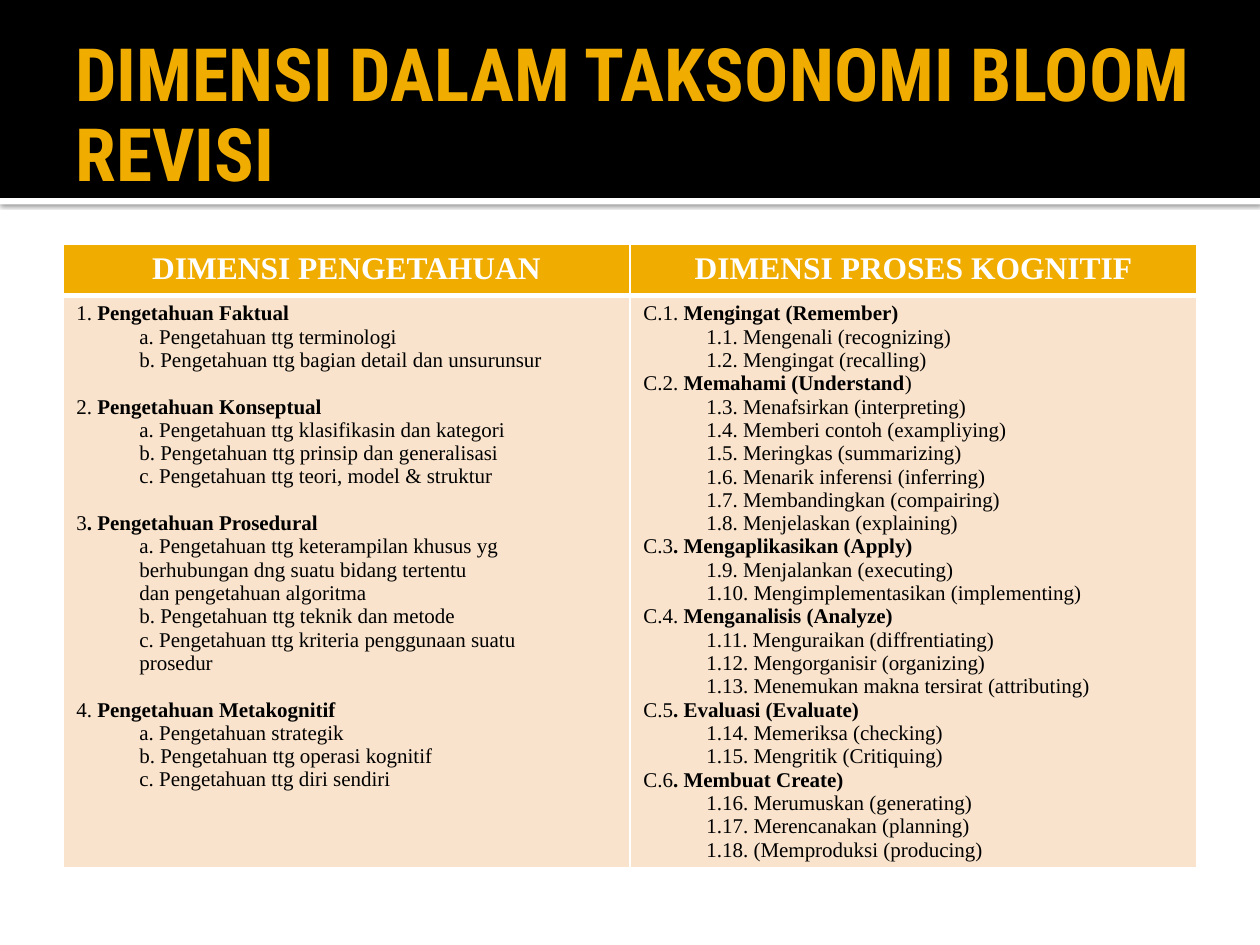
from pptx import Presentation
from pptx.dml.color import RGBColor
from pptx.enum.shapes import MSO_SHAPE as Preset
from pptx.enum.text import MSO_ANCHOR as Anchor, MSO_AUTO_SIZE as AutoSize, PP_ALIGN as Align
from pptx.oxml import parse_xml
from pptx.oxml.ns import nsdecls
from pptx.util import Cm, Pt

BLACK = RGBColor(0x00, 0x00, 0x00)
WHITE = RGBColor(0xFF, 0xFF, 0xFF)
GOLD = RGBColor(0xF0, 0xAD, 0x00)
CREAM = RGBColor(0xF9, 0xE3, 0xCC)
TITLE_FONT = "Roboto Condensed"
TABLE_FONT = "Times New Roman"
BODY_SIZE = Pt(12)
BLANK_LINE = Pt(13.3)

TITLE = "DIMENSI DALAM TAKSONOMI BLOOM REVISI"
KNOWLEDGE = [
    ("1. ", "Pengetahuan Faktual", "", [
        "a. Pengetahuan ttg terminologi",
        "b. Pengetahuan ttg bagian detail dan unsurunsur"]),
    ("2. ", "Pengetahuan Konseptual", "", [
        "a. Pengetahuan ttg klasifikasin dan kategori",
        "b. Pengetahuan ttg prinsip dan generalisasi",
        "c. Pengetahuan ttg teori, model & struktur"]),
    ("3", ". Pengetahuan Prosedural", "", [
        "a. Pengetahuan ttg keterampilan khusus yg",
        "berhubungan dng suatu bidang tertentu",
        "dan pengetahuan algoritma",
        "b. Pengetahuan ttg teknik dan metode",
        "c. Pengetahuan ttg kriteria penggunaan suatu",
        "prosedur"]),
    ("4. ", "Pengetahuan Metakognitif", "", [
        "a. Pengetahuan strategik",
        "b. Pengetahuan ttg operasi kognitif",
        "c. Pengetahuan ttg diri sendiri"]),
]
COGNITION = [
    ("C.1. ", "Mengingat (Remember)", "", [
        "1.1. Mengenali (recognizing)",
        "1.2. Mengingat (recalling)"]),
    ("C.2. ", "Memahami (Understand", ")", [
        "1.3. Menafsirkan (interpreting)",
        "1.4. Memberi contoh (exampliying)",
        "1.5. Meringkas (summarizing)",
        "1.6. Menarik inferensi (inferring)",
        "1.7. Membandingkan (compairing)",
        "1.8. Menjelaskan (explaining)"]),
    ("C.3", ". Mengaplikasikan (Apply)", "", [
        "1.9. Menjalankan (executing)",
        "1.10. Mengimplementasikan (implementing)"]),
    ("C.4. ", "Menganalisis (Analyze)", "", [
        "1.11. Menguraikan (diffrentiating)",
        "1.12. Mengorganisir (organizing)",
        "1.13. Menemukan makna tersirat (attributing)"]),
    ("C.5", ". Evaluasi (Evaluate)", "", [
        "1.14. Memeriksa (checking)",
        "1.15. Mengritik (Critiquing)"]),
    ("C.6", ". Membuat Create)", "", [
        "1.16. Merumuskan (generating)",
        "1.17. Merencanakan (planning)",
        "1.18. (Memproduksi (producing)"]),
]
COLUMNS = [
    ("DIMENSI PENGETAHUAN", KNOWLEDGE, BLANK_LINE),
    ("DIMENSI PROSES KOGNITIF", COGNITION, Pt(0)),
]


def add_span(para, text, font, size, color, bold=False):
    """Add one formatted run to a paragraph."""
    span = para.add_run()
    span.text = text
    span.font.name = font
    span.font.size = size
    span.font.bold = bold
    span.font.color.rgb = color


def add_bar(page, left, top, width, height, color):
    """Add a plain filled rectangle."""
    bar = page.shapes.add_shape(Preset.RECTANGLE, left, top, width, height)
    bar.shadow.inherit = False
    bar.fill.solid()
    bar.fill.fore_color.rgb = color
    bar.line.fill.background()
    return bar


def add_banner(page, left, top, width, height):
    """Place the black banner, its white shadowed rule and the title."""
    rule = add_bar(page, left, top + height, width, Cm(0.13), WHITE)
    rule.element.spPr.find("{*}effectLst").append(parse_xml(
        f'<a:outerShdw {nsdecls("a")} blurRad="{Pt(2.5)}" dist="{Pt(0.8)}" dir="5400000"'
        ' algn="tl" rotWithShape="0"><a:srgbClr val="000000"><a:alpha val="60000"/>'
        '</a:srgbClr></a:outerShdw>'))
    add_bar(page, left, top, width, height, BLACK)

    title = page.shapes.title
    title.element.getparent().append(title.element)
    title.left, title.top = left + Cm(1.27), top + Cm(0.43)
    title.width, title.height = width - Cm(2.54), height - Cm(0.51)
    frame = title.text_frame
    frame.word_wrap = True
    frame.vertical_anchor = Anchor.MIDDLE
    frame.margin_left = Cm(0.25)
    frame.margin_right = frame.margin_top = frame.margin_bottom = Cm(0.13)
    frame.auto_size = AutoSize.TEXT_TO_FIT_SHAPE
    title.element.txBody.bodyPr.find("{*}normAutofit").set("fontScale", "90000")
    para = frame.paragraphs[0]
    para.alignment = Align.LEFT
    add_span(para, TITLE, TITLE_FONT, Pt(45), GOLD, True)


def style_cell(cell, color, bottom):
    """Give a cell its margins, white borders and fill."""
    cell.margin_left = cell.margin_right = Cm(0.27)
    cell.margin_top = cell.margin_bottom = Cm(0.13)
    properties = cell._tc.get_or_add_tcPr()
    for side, width in (("L", 1), ("R", 1), ("T", 1), ("B", bottom)):
        properties.append(parse_xml(
            f'<a:ln{side} {nsdecls("a")} w="{Pt(width)}"><a:solidFill>'
            f'<a:srgbClr val="{WHITE}"/></a:solidFill></a:ln{side}>'))
    cell.fill.solid()
    cell.fill.fore_color.rgb = color


def fill_outline(frame, groups, gap):
    """Write numbered headings with indented items below each."""
    para = frame.paragraphs[0]
    for index, (number, heading, ending, items) in enumerate(groups):
        if index:
            para = frame.add_paragraph()
            para.space_before = gap
        for text, bold in ((number, False), (heading, True), (ending, False)):
            if text:
                add_span(para, text, TABLE_FONT, BODY_SIZE, BLACK, bold)
        for item in items:
            para = frame.add_paragraph()
            para.level = 1
            para._p.get_or_add_pPr().set("marL", str(Cm(1.27)))
            add_span(para, item, TABLE_FONT, BODY_SIZE, BLACK)


def add_dimensions(page, left, top, width, height):
    """Place the two-column table of dimensions."""
    box = page.shapes.add_table(2, len(COLUMNS), left, top, width, height)
    table = box.table
    table.rows[0].height = Cm(1.03)
    table.rows[1].height = height - Cm(1.03)
    for column, (heading, groups, gap) in enumerate(COLUMNS):
        head, body = table.cell(0, column), table.cell(1, column)
        style_cell(head, GOLD, 3)
        style_cell(body, CREAM, 1)
        para = head.text_frame.paragraphs[0]
        para.alignment = Align.CENTER
        add_span(para, heading, TABLE_FONT, Pt(18), WHITE, True)
        fill_outline(body.text_frame, groups, gap)


def main():
    """Build and save the deck."""
    deck = Presentation()
    deck.slide_width, deck.slide_height = Cm(25.4), Cm(19.05)
    page = deck.slides.add_slide(deck.slide_layouts[5])
    add_banner(page, 0, 0, deck.slide_width, Cm(3.99))
    add_dimensions(page, Cm(1.27), Cm(4.93), Cm(22.86), Cm(12.55))
    deck.save("out.pptx")


if __name__ == "__main__":
    main()
